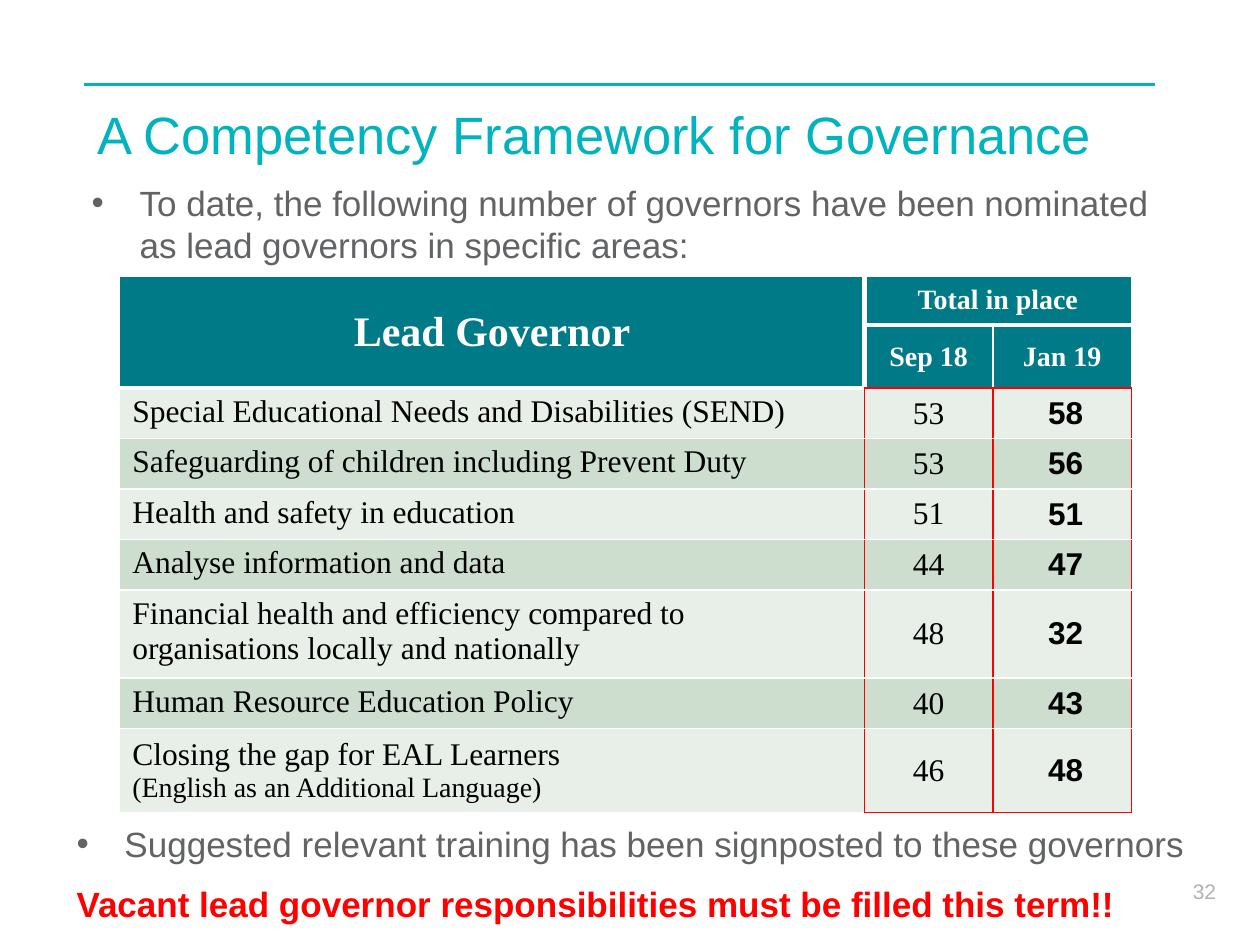
from pptx import Presentation
from pptx.dml.color import RGBColor
from pptx.enum.shapes import MSO_CONNECTOR
from pptx.enum.text import MSO_ANCHOR, PP_ALIGN
from pptx.oxml.ns import qn
from pptx.util import Inches, Pt
from lxml.etree import SubElement

W, H = 10, 7.5
SANS, SERIF = "Arial", "Times New Roman"
COLORS = {
    "accent": "00B3BE", "header": "007A87", "text": "616365", "number": "B2B2B2",
    "alert": "FF0000", "white": "FFFFFF", "black": "000000",
    "light": "E8EFE8", "dark": "CEDECE",
}
COLUMNS = [5.91, 1.02, 1.1]
ROW = 0.39
ROWS = [ROW, 0.46] + [ROW] * 4 + [0.68, ROW, 0.62]
AREAS = [
    (["Special Educational Needs and Disabilities (SEND)"], 53, 58),
    (["Safeguarding of children including Prevent Duty"], 53, 56),
    (["Health and safety in education"], 51, 51),
    (["Analyse information and data"], 44, 47),
    (["Financial health and efficiency compared to organisations locally and nationally"], 48, 32),
    (["Human Resource Education Policy"], 40, 43),
    (["Closing the gap for EAL Learners", "(English as an Additional Language)"], 46, 48),
]


def rgb(name):
    return RGBColor.from_string(COLORS[name])


def add_run(p, text, size, color, font=SANS, bold=False):
    r = p.add_run()
    r.text = text
    r.font.name, r.font.size, r.font.bold = font, Pt(size), bold
    r.font.color.rgb = rgb(color)


def add_box(s, x, y, w, h):
    tf = s.shapes.add_textbox(Inches(x), Inches(y), Inches(w), Inches(h)).text_frame
    tf.word_wrap = True
    return tf


def add_bullet(p, text):
    p.space_after = Pt(6)
    pPr = p._p.get_or_add_pPr()
    pPr.set("marL", str(Inches(0.38)))
    pPr.set("indent", str(-Inches(0.38)))
    SubElement(pPr, qn("a:buFont")).set("typeface", SANS)
    SubElement(pPr, qn("a:buChar")).set("char", "•")
    add_run(p, text, 20, "text")


def add_rule(s):
    y = Inches(0.67)
    line = s.shapes.add_connector(MSO_CONNECTOR.STRAIGHT, Inches(0.67), y, Inches(9.17), y)
    line.line.color.rgb = rgb("accent")
    line.line.width = Pt(1.5)
    SubElement(line._element.spPr, qn("a:effectLst"))


def set_title(s, text):
    title = s.shapes.title
    title.left, title.top = Inches(0.67), Inches(0.76)
    title.width, title.height = Inches(9.14), Inches(0.71)
    tf = title.text_frame
    tf.vertical_anchor = MSO_ANCHOR.TOP
    p = tf.paragraphs[0]
    p.alignment = PP_ALIGN.LEFT
    add_run(p, text, 30, "accent")


def style_cell(cell, fill, **borders):
    """Fill a cell and border it; each side is (colour, points), thin white if not given."""
    tcPr = cell._tc.get_or_add_tcPr()
    for side in "LRTB":
        color, width = borders.get(side, ("white", 1))
        ln = SubElement(tcPr, qn(f"a:ln{side}"), w=str(Pt(width)))
        solid = SubElement(ln, qn("a:solidFill"))
        SubElement(solid, qn("a:srgbClr")).set("val", COLORS[color])
    cell.fill.solid()
    cell.fill.fore_color.rgb = rgb(fill)
    cell.vertical_anchor = MSO_ANCHOR.MIDDLE


def write_cell(cell, text, size, color, align=PP_ALIGN.CENTER, **font):
    p = cell.text_frame.paragraphs[0]
    p.alignment = align
    add_run(p, text, size, color, **font)


def add_header(table):
    thick, red = ("white", 3), ("alert", 1)
    for row in range(2):
        style_cell(table.cell(row, 0), "header", R=thick, B=thick)
        for col in (1, 2):
            sides = {"B": red} if row else {"B": thick}
            if col == 1:
                sides["L"] = thick
            if row:
                sides["T"] = thick
            style_cell(table.cell(row, col), "header", **sides)
    table.cell(0, 0).merge(table.cell(1, 0))
    table.cell(0, 1).merge(table.cell(0, 2))
    for row, col, text, size in [(0, 0, "Lead Governor", 24), (0, 1, "Total in place", 16),
                                 (1, 1, "Sep 18", 16), (1, 2, "Jan 19", 16)]:
        write_cell(table.cell(row, col), text, size, "white", font=SERIF, bold=True)


def add_area(table, index, lines, sep, jan):
    row, red = index + 2, ("alert", 1)
    first, last = index == 0, index == len(AREAS) - 1
    fill = "dark" if index % 2 else "light"
    label, before, now = (table.cell(row, col) for col in range(3))

    style_cell(label, fill, R=red, T=("white", 3 if first else 1))
    if not last:
        label.vertical_anchor = MSO_ANCHOR.TOP
    write_cell(label, lines[0], 18, "black", PP_ALIGN.LEFT, font=SERIF)
    for line in lines[1:]:
        add_run(label.text_frame.add_paragraph(), line, 16, "black", SERIF)

    sides = {"L": red, "R": red}
    if first:
        sides["T"] = red
    if last:
        sides["B"] = red
    for cell in (before, now):
        style_cell(cell, fill, **sides)
    write_cell(before, str(sep), 18, "black", font=SERIF)
    now.margin_left = Inches(0.44)
    write_cell(now, str(jan), 18, "black", PP_ALIGN.LEFT, bold=True)


def add_governor_table(s):
    table = s.shapes.add_table(len(ROWS), len(COLUMNS), Inches(0.95), Inches(2.19),
                               Inches(sum(COLUMNS)), Inches(sum(ROWS))).table
    for column, width in zip(table.columns, COLUMNS):
        column.width = Inches(width)
    for row, height in zip(table.rows, ROWS):
        row.height = Inches(height)
    add_header(table)
    for index, area in enumerate(AREAS):
        add_area(table, index, *area)


def main():
    prs = Presentation()
    prs.slide_width, prs.slide_height = Inches(W), Inches(H)
    s = prs.slides.add_slide(prs.slide_layouts[5])
    add_rule(s)
    set_title(s, "A Competency Framework for Governance")

    intro = add_box(s, 0.63, 1.39, 8.67, 0.79)
    add_bullet(intro.paragraphs[0], "To date, the following number of governors have been "
               "nominated as lead governors in specific areas:")
    add_governor_table(s)

    closing = add_box(s, 0.51, 6.48, 9.13, 1.02)
    add_bullet(closing.paragraphs[0],
               "Suggested relevant training has been signposted to these governors")
    p = closing.add_paragraph()
    p.space_before = Pt(4)
    add_run(p, "Vacant lead governor responsibilities must be filled this term!!",
            20, "alert", bold=True)

    p = add_box(s, 7.83, 6.92, 1.92, 0.3).paragraphs[0]
    p.alignment = PP_ALIGN.RIGHT
    add_run(p, "32", 12, "number")
    prs.save("out.pptx")


if __name__ == "__main__":
    main()
